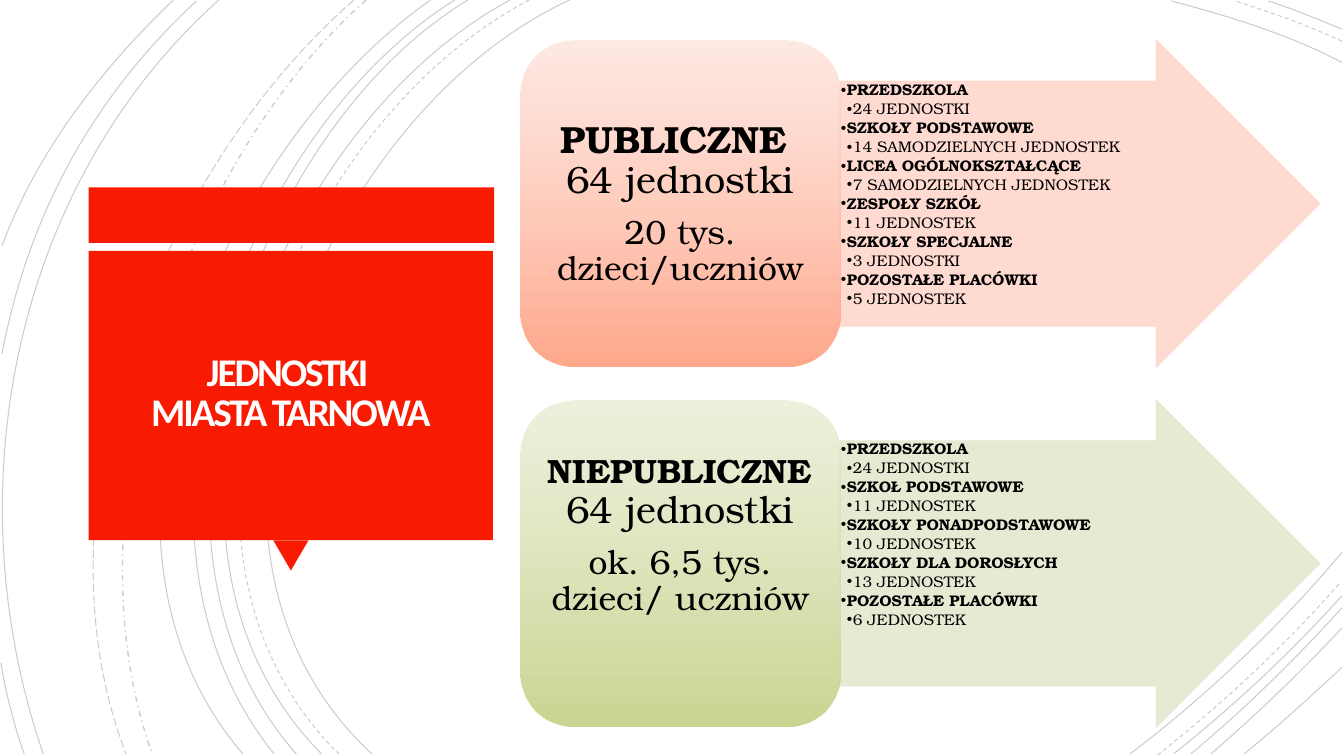
from lxml.etree import SubElement
from pptx import Presentation
from pptx.dml.color import RGBColor
from pptx.enum.dml import MSO_LINE_DASH_STYLE as Dash
from pptx.enum.shapes import MSO_SHAPE as Shape
from pptx.enum.text import MSO_ANCHOR as Anchor, MSO_AUTO_SIZE as AutoSize, PP_ALIGN as Align
from pptx.oxml.ns import qn
from pptx.util import Pt

PX = 9144  # 100 px to the inch
RED = RGBColor(0xF8, 0x1B, 0x02)
BLACK = RGBColor(0x00, 0x00, 0x00)
WHITE = RGBColor(0xFF, 0xFE, 0xFF)
PINK = RGBColor(0xFE, 0xD6, 0xCC)
PINK_TOP = RGBColor(0xFF, 0xDA, 0xD0)
SALMON = RGBColor(0xFF, 0xA1, 0x82)
SAGE = RGBColor(0xE3, 0xE8, 0xCF)
SAGE_TOP = RGBColor(0xE2, 0xE8, 0xC6)
OLIVE = RGBColor(0xC6, 0xD2, 0x89)

# Background arcs: start, two control points and end of each curve
SOLID_ARCS = [
    (565, 0, 315, 115, 143, 540, 369, 748), (1331, 62, 1278, 34, 1218, 16, 1162, 1),
    (1121, 748, 1197, 690, 1269, 622, 1331, 548), (506, 0, 270, 127, 110, 537, 319, 748),
    (1331, 29, 1307, 19, 1283, 9, 1258, 1), (1164, 748, 1223, 701, 1280, 648, 1331, 591),
    (464, 0, 244, 133, 110, 541, 294, 748), (1181, 748, 1234, 704, 1284, 655, 1331, 603),
    (451, 0, 231, 138, 97, 533, 272, 748), (1201, 748, 1246, 709, 1290, 667, 1331, 623),
    (427, 0, 217, 147, 53, 529, 241, 748), (1234, 748, 1267, 721, 1299, 692, 1331, 662),
    (217, 0, 11, 185, -46, 490, 43, 748), (195, 1, 92, 96, 28, 214, 2, 351),
    (1, 658, 6, 689, 14, 719, 24, 748), (172, 0, 100, 69, 37, 150, 2, 244),
]
DASHED_ARCS = [
    (525, 0, 285, 125, 123, 537, 336, 748), (1331, 41, 1297, 25, 1260, 12, 1225, 1),
    (1148, 749, 1213, 698, 1275, 640, 1330, 577),
]
DASH_DOT_ARC = (363, 0, 176, 166, 65, 509, 151, 748)
LONG_DASH_ARC = (351, 0, 157, 169, 29, 499, 125, 748)

PUBLIC_UNITS = [
    ("PRZEDSZKOLA", "24 JEDNOSTKI"),
    ("SZKOŁY PODSTAWOWE", "14 SAMODZIELNYCH JEDNOSTEK"),
    ("LICEA OGÓLNOKSZTAŁCĄCE", "7 SAMODZIELNYCH JEDNOSTEK"),
    ("ZESPOŁY SZKÓŁ", "11 JEDNOSTEK"),
    ("SZKOŁY SPECJALNE", "3 JEDNOSTKI"),
    ("POZOSTAŁE PLACÓWKI", "5 JEDNOSTEK"),
]
PRIVATE_UNITS = [
    ("PRZEDSZKOLA", "24 JEDNOSTKI"),
    ("SZKOŁ PODSTAWOWE", "11 JEDNOSTEK"),
    ("SZKOŁY PONADPODSTAWOWE", "10 JEDNOSTEK"),
    ("SZKOŁY DLA DOROSŁYCH", "13 JEDNOSTEK"),
    ("POZOSTAŁE PLACÓWKI", "6 JEDNOSTEK"),
]


class SlideKit:
    title_font = "Calibri"
    text_font = "TeX Gyre Bonum"

    def __init__(self, slide):
        self.slide = slide
        self.shapes = slide.shapes

    def set_alpha(self, parent, *percents):
        for color, percent in zip(parent.iter(qn("a:srgbClr")), percents):
            SubElement(color, qn("a:alpha")).set("val", str(percent * 1000))

    def arc(self, curve, dash=Dash.SOLID, weight=0.75):
        start, *controls = zip(curve[::2], curve[1::2])
        builder = self.shapes.build_freeform(*start, scale=PX)
        builder.add_line_segments(controls, close=False)
        arc = builder.convert_to_shape()
        # Turn the three straight segments into one Bézier curve
        outline = next(arc.element.iter(qn("a:path")))
        segments = outline.findall(qn("a:lnTo"))
        bezier = SubElement(outline, qn("a:cubicBezTo"))
        for segment in segments:
            bezier.append(segment[0])
            outline.remove(segment)
        arc.shadow.inherit = False
        arc.fill.background()
        arc.line.color.rgb = BLACK
        arc.line.width = Pt(weight)
        arc.line.dash_style = dash
        self.set_alpha(arc.element.spPr, 20)

    def block(self, kind, box, color, rotation=0):
        block = self.shapes.add_shape(kind, *[v * PX for v in box])
        block.shadow.inherit = False
        block.fill.solid()
        block.fill.fore_color.rgb = color
        block.line.fill.background()
        block.rotation = rotation
        return block

    def arrow(self, box, color):
        arrow = self.block(Shape.RIGHT_ARROW, box, color)
        arrow.adjustments[0], arrow.adjustments[1] = 0.75, 0.5
        arrow.line.color.rgb = color
        arrow.line.width = Pt(0.75)
        self.set_alpha(arrow.element.spPr, 90, 90)

    def gradient_card(self, box, top, bottom):
        card = self.block(Shape.ROUNDED_RECTANGLE, box, top)
        card.fill.gradient()
        card.fill.gradient_angle = 270
        for stop, color in zip(card.fill.gradient_stops, (top, bottom)):
            stop.color.rgb = color
        self.set_alpha(card.element.spPr, 60, 92)

    def frame(self, holder, insets, anchor):
        frame = holder.text_frame
        frame.word_wrap = True
        frame.auto_size = AutoSize.NONE
        frame.vertical_anchor = anchor
        (frame.margin_left, frame.margin_top,
         frame.margin_right, frame.margin_bottom) = [v * PX for v in insets]
        return frame

    def place(self, holder, box):
        holder.left, holder.top, holder.width, holder.height = [v * PX for v in box]
        holder.element.getparent().append(holder.element)  # bring to front

    def paragraph(self, frame, first, align, spacing=0.9, after=0):
        para = frame.paragraphs[0] if first else frame.add_paragraph()
        para.alignment = align
        para.line_spacing = spacing
        para.space_before = Pt(0)
        para.space_after = Pt(after)
        return para

    def run(self, para, text, size, bold=False, color=BLACK, font=text_font):
        run = para.add_run()
        run.text = text
        run.font.size = Pt(size)
        run.font.bold = bold
        run.font.name = font
        run.font.color.rgb = color
        return run

    def title(self, box, lines):
        holder = self.shapes.title
        self.place(holder, box)
        frame = self.frame(holder, (25, 25, 25, 25), Anchor.MIDDLE)
        para = self.paragraph(frame, True, Align.CENTER, spacing=0.85)
        for i, line in enumerate(lines):
            if i:
                para.add_line_break()
            run = self.run(para, line, 28, True, WHITE, self.title_font)
            run._r.get_or_add_rPr().set("spc", "-150")

    def unit_list(self, holder, box, units):
        self.place(holder, box)
        frame = self.frame(holder, (1, 1, 1, 1), Anchor.TOP)
        entries = [(level, text) for pair in units for level, text in enumerate(pair)]
        for i, (level, text) in enumerate(entries):
            para = self.paragraph(frame, i == 0, Align.LEFT, after=1.65)
            para.level = level + 1
            props = para._p.get_or_add_pPr()
            props.set("marL", str((level + 1) * 6 * PX))
            props.set("indent", str(-6 * PX))
            SubElement(props, qn("a:buChar")).set("char", "•")
            self.run(para, text, 11, bold=level == 0)

    def summary(self, box, name, name_size, count, pupils, bottom_inset):
        holder = self.shapes.add_textbox(*[v * PX for v in box])
        frame = self.frame(holder, (11, 6, 11, bottom_inset), Anchor.MIDDLE)
        para = self.paragraph(frame, True, Align.CENTER, after=9.45)
        self.run(para, name, name_size, bold=True)
        para.add_line_break()
        self.run(para, count, 27)
        self.run(self.paragraph(frame, False, Align.CENTER), pupils, 24)


def main():
    deck = Presentation()
    deck.slide_width, deck.slide_height = 1333 * PX, 750 * PX
    kit = SlideKit(deck.slides.add_slide(deck.slide_layouts[3]))
    list_holders = [kit.slide.placeholders[1], kit.slide.placeholders[2]]

    # Background arcs
    for curve in SOLID_ARCS:
        kit.arc(curve)
    for curve in DASHED_ARCS:
        kit.arc(curve, Dash.DASH)
    kit.arc(DASH_DOT_ARC, Dash.DASH_DOT, weight=1)
    kit.arc(LONG_DASH_ARC, Dash.LONG_DASH)

    # Red title panel
    kit.block(Shape.RECTANGLE, (88, 186, 402, 55), RED)
    kit.block(Shape.ISOSCELES_TRIANGLE, (271, 536, 35, 30), RED, rotation=180)
    kit.block(Shape.RECTANGLE, (88, 249, 401, 287), RED)
    kit.title((97, 257, 383, 269), ["JEDNOSTKI ", "MIASTA TARNOWA"])

    # Public and non-public sectors
    sectors = [
        (PINK, PINK_TOP, SALMON, PUBLIC_UNITS,
         ("PUBLICZNE ", 27, "64 jednostki", "20 tys. dzieci/uczniów", 6)),
        (SAGE, SAGE_TOP, OLIVE, PRIVATE_UNITS,
         ("NIEPUBLICZNE", 24, "64 jednostki", "ok. 6,5 tys. dzieci/ uczniów", 59)),
    ]
    for i, (arrow_color, top_color, bottom_color, units, summary) in enumerate(sectors):
        top, text_shift = 40 + i * 357, i * 356
        kit.arrow((833, top, 476, 324), arrow_color)
        kit.unit_list(list_holders[i], (833, 81 + text_shift, 355, 243), units)
        kit.gradient_card((516, top, 318, 324), top_color, bottom_color)
        kit.summary((531, 56 + text_shift, 287, 293), *summary)

    deck.save("out.pptx")


if __name__ == "__main__":
    main()
